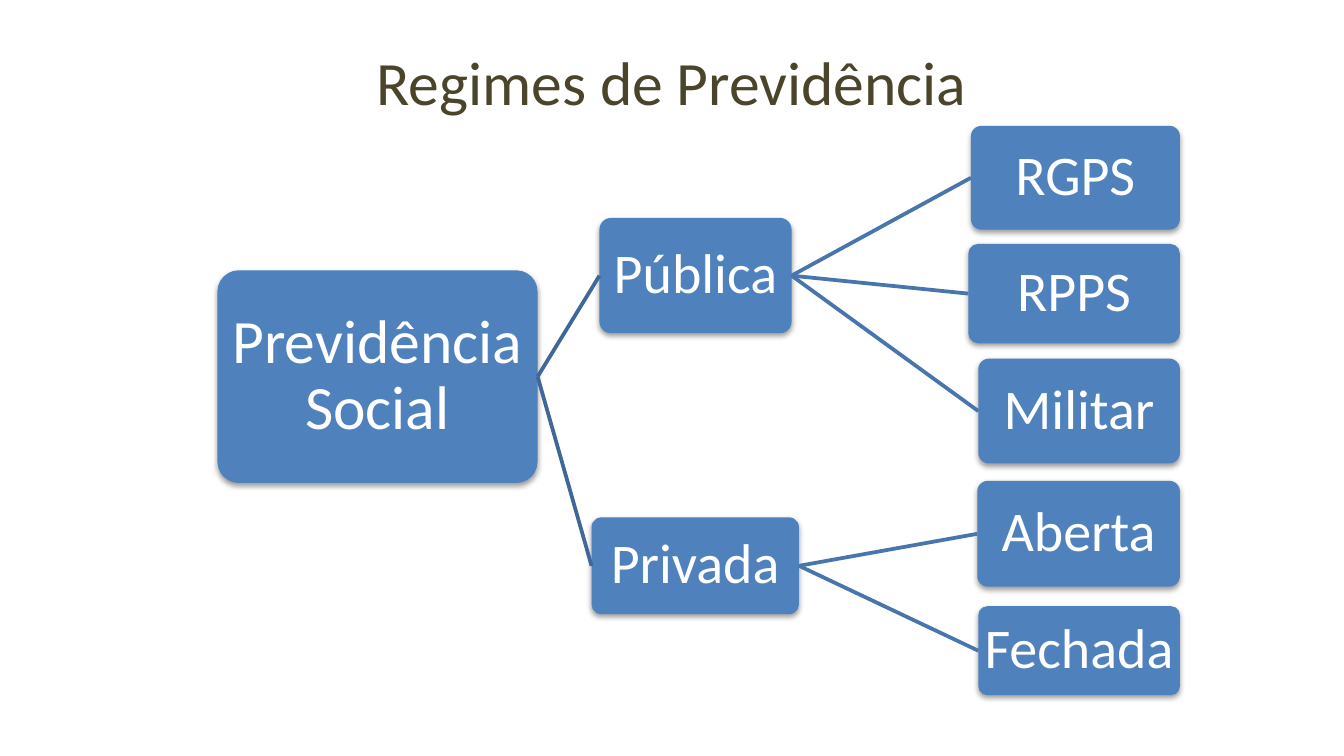
import pptx
import pptx.dml.color
import pptx.enum.shapes
import pptx.enum.text
import pptx.oxml
import pptx.oxml.ns
import pptx.util
from pptx.util import Cm

RGBColor = pptx.dml.color.RGBColor
WHITE = RGBColor(0xFF, 0xFF, 0xFF)
BLUE = RGBColor(0x4F, 0x81, 0xBD)
ROOT_LINE = RGBColor(0x3F, 0x67, 0x97)
BRANCH_LINE = RGBColor(0x48, 0x75, 0xAC)
OLIVE = RGBColor(0x4A, 0x45, 0x2A)

RIGHT, LEFT = 3, 1  # connection sites of a rectangle

SHADOW = (
    '<a:effectLst {}><a:outerShdw blurRad="39370" dist="20320" dir="5400000" rotWithShape="0">'
    '<a:srgbClr val="000000"><a:alpha val="38000"/></a:srgbClr></a:outerShdw></a:effectLst>'
).format(pptx.oxml.ns.nsdecls("a"))
NO_EFFECT = "<a:effectLst {}/>".format(pptx.oxml.ns.nsdecls("a"))

# name: (left, top, width, height in cm, text size)
BOXES = {
    "Previdência Social": (4.11, 5.11, 6.05, 4.02, 33),
    "Pública": (11.33, 4.12, 3.63, 2.18, 30),
    "Privada": (11.18, 9.78, 3.92, 1.83, 30),
    "RGPS": (18.35, 2.38, 3.95, 1.96, 30),
    "RPPS": (18.3, 4.61, 4, 1.88, 30),
    "Militar": (18.49, 6.78, 3.81, 1.98, 30),
    "Aberta": (18.47, 9.09, 3.83, 2, 30),
    "Fechada": (18.49, 11.46, 3.81, 1.68, 30),
}
TREE = {
    "Previdência Social": (ROOT_LINE, ["Pública", "Privada"]),
    "Pública": (BRANCH_LINE, ["RGPS", "RPPS", "Militar"]),
    "Privada": (BRANCH_LINE, ["Aberta", "Fechada"]),
}


class Diagram:
    def __init__(self, slide, font_name="Calibri", line_width=2):
        self.slide = slide
        self.font_name = font_name
        self.line_width = pptx.util.Pt(line_width)

    def set_text(self, shape, text, size, color, inset, line_spacing):
        """Put centred text into a shape."""
        frame = shape.text_frame
        frame_format = {
            "word_wrap": True,
            "vertical_anchor": pptx.enum.text.MSO_ANCHOR.MIDDLE,
        }
        for side in ("left", "top", "right", "bottom"):
            frame_format["margin_" + side] = Cm(inset)
        for name, value in frame_format.items():
            setattr(frame, name, value)
        paragraph = frame.paragraphs[0]
        paragraph.text = text
        paragraph.alignment = pptx.enum.text.PP_ALIGN.CENTER
        paragraph.line_spacing = line_spacing
        font = paragraph.runs[0].font
        for name, value in {"name": self.font_name, "size": pptx.util.Pt(size)}.items():
            setattr(font, name, value)
        font.color.rgb = color

    def title(self, text, left, top, width, height):
        shape = self.slide.shapes.add_textbox(Cm(left), Cm(top), Cm(width), Cm(height))
        self.set_text(shape, text, 33, OLIVE, 0.1, 1.0)

    def box(self, text, left, top, width, height, size):
        shape = self.slide.shapes.add_shape(
            pptx.enum.shapes.MSO_SHAPE.ROUNDED_RECTANGLE,
            Cm(left), Cm(top), Cm(width), Cm(height))
        shape.adjustments[0] = 0.1
        shape.fill.solid()
        shape.fill.fore_color.rgb = BLUE
        shape.line.fill.background()
        shape._element.spPr.append(pptx.oxml.parse_xml(SHADOW))
        self.set_text(shape, text, size, WHITE, 0.05, 0.9)
        return shape

    def link(self, parent, child, color):
        connector = self.slide.shapes.add_connector(
            pptx.enum.shapes.MSO_CONNECTOR.STRAIGHT, 0, 0, 0, 0)
        connector.begin_connect(parent, RIGHT)
        connector.end_connect(child, LEFT)
        connector.line.color.rgb = color
        connector.line.width = self.line_width
        connector._element.spPr.append(pptx.oxml.parse_xml(NO_EFFECT))


def main():
    presentation = pptx.Presentation()
    presentation.slide_width = Cm(25.4)
    presentation.slide_height = Cm(14.29)
    diagram = Diagram(presentation.slides.add_slide(presentation.slide_layouts[6]))

    boxes = {text: diagram.box(text, *values) for text, values in BOXES.items()}
    for parent, (color, children) in TREE.items():
        for child in children:
            diagram.link(boxes[parent], boxes[child], color)
    diagram.title("Regimes de Previdência", 4.12, 0.87, 17.15, 1.32)

    presentation.save("out.pptx")


if __name__ == "__main__":
    main()
